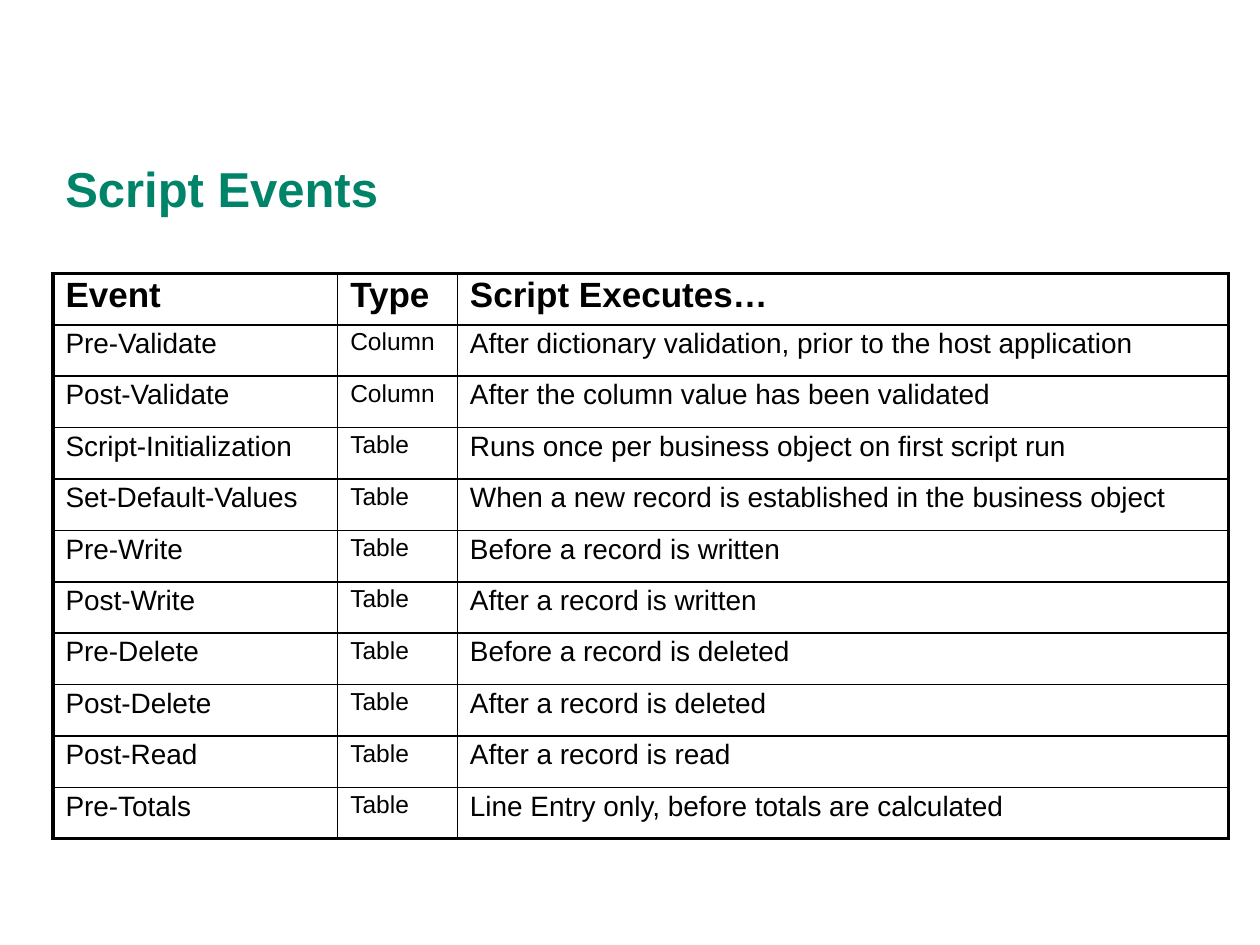
from lxml import etree
from pptx import Presentation
from pptx.dml.color import RGBColor
from pptx.enum.text import MSO_ANCHOR
from pptx.oxml.ns import qn
from pptx.util import Inches, Pt

MIDDLE = MSO_ANCHOR.MIDDLE
FONT = "Arial"
COLORS = {"title": "008469", "text": "000000", "border": "000000"}

HEADER = ("Event", "Type", "Script Executes…")
EVENTS = [
    ("Pre-Validate", "Column", "After dictionary validation, prior to the host application"),
    ("Post-Validate", "Column", "After the column value has been validated"),
    ("Script-Initialization", "Table", "Runs once per business object on first script run"),
    ("Set-Default-Values", "Table", "When a new record is established in the business object"),
    ("Pre-Write", "Table", "Before a record is written"),
    ("Post-Write", "Table", "After a record is written"),
    ("Pre-Delete", "Table", "Before a record is deleted"),
    ("Post-Delete", "Table", "After a record is deleted"),
    ("Post-Read", "Table", "After a record is read"),
    ("Pre-Totals", "Table", "Line Entry only, before totals are calculated"),
]
COLUMN_WIDTHS = (2.26, 0.95, 6.12)
HEADER_SIZE = 20
BODY_SIZES = (16, 14, 16)
INNER_LINE, OUTER_LINE = 1, 2.25


def style_text(para, size, color, bold):
    for span in para.runs:
        span.font.name = FONT
        span.font.size = Pt(size)
        span.font.bold = bold
        span.font.color.rgb = RGBColor.from_string(COLORS[color])


def add_title(page, left, top, width, height):
    box = page.shapes.add_textbox(left, top, width, height)
    frame = box.text_frame
    frame.word_wrap = True
    frame.vertical_anchor = MIDDLE
    frame.text = "Script Events"
    style_text(frame.paragraphs[0], 28, "title", True)


def set_borders(cell, outer_sides):
    """Draw the four sides, thicker where the cell meets the table's edge."""
    properties = cell._tc.get_or_add_tcPr()
    for side in "LRTB":
        weight = OUTER_LINE if side in outer_sides else INNER_LINE
        line = etree.SubElement(properties, qn(f"a:ln{side}"), w=str(Pt(weight)))
        fill = etree.SubElement(line, qn("a:solidFill"))
        etree.SubElement(fill, qn("a:srgbClr"), val=COLORS["border"])


def add_event_table(page, left, top, width, height):
    rows = [HEADER, *EVENTS]
    last_row, last_column = len(rows) - 1, len(HEADER) - 1
    table = page.shapes.add_table(len(rows), len(HEADER), left, top, width, height).table
    table.first_row = False
    table.horz_banding = False
    for column, column_width in zip(table.columns, COLUMN_WIDTHS):
        column.width = Inches(column_width)

    for r, values in enumerate(rows):
        for c, value in enumerate(values):
            cell = table.cell(r, c)
            edges = {"L": c == 0, "R": c == last_column, "T": r == 0, "B": r == last_row}
            set_borders(cell, [side for side, outer in edges.items() if outer])
            cell.fill.background()
            cell.text_frame.text = value
            para = cell.text_frame.paragraphs[0]
            para.line_spacing = 0.9
            is_header = r == 0
            style_text(para, HEADER_SIZE if is_header else BODY_SIZES[c], "text", is_header)


def main():
    deck = Presentation()
    deck.slide_width, deck.slide_height = Inches(10), Inches(7.5)
    page = deck.slides.add_slide(deck.slide_layouts[6])
    add_title(page, Inches(0.42), Inches(1.33), Inches(9.17), Inches(0.33))
    add_event_table(page, Inches(0.42), Inches(2.17), Inches(9.33), Inches(4.49))
    deck.save("out.pptx")


if __name__ == "__main__":
    main()
